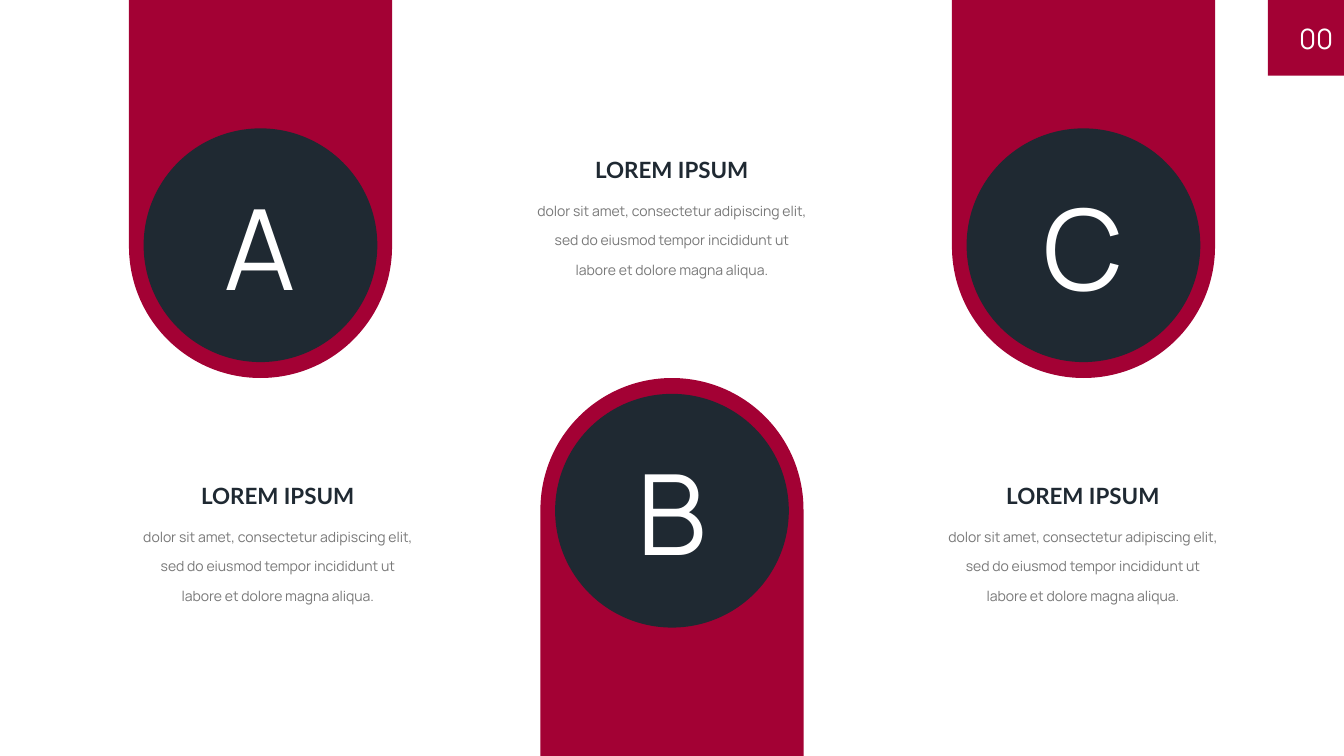
import pptx
import pptx.dml.color
import pptx.enum.shapes
import pptx.enum.text
import pptx.util
from dataclasses import dataclass

Cm = pptx.util.Cm
SHAPES = pptx.enum.shapes.MSO_SHAPE
ALIGN = pptx.enum.text.PP_ALIGN
ANCHOR = pptx.enum.text.MSO_ANCHOR


@dataclass(frozen=True)
class Theme:
    crimson: str = "A30134"
    navy: str = "1F2932"
    gray: str = "787878"
    white: str = "FFFFFF"
    heading_font: str = "Lato"
    body_font: str = "Manrope"
    letter_size: int = 80
    number_size: int = 20
    heading_size: int = 16
    body_size: int = 10


class SlideBuilder:
    def __init__(self, slide, theme):
        self.slide = slide
        self.theme = theme

    def shape(self, kind, left, top, width, height, color):
        shape = self.slide.shapes.add_shape(
            kind, Cm(left), Cm(top), Cm(width), Cm(height))
        shape.shadow.inherit = False
        shape.fill.solid()
        shape.fill.fore_color.rgb = pptx.dml.color.RGBColor.from_string(color)
        shape.line.fill.background()
        return shape

    def set_text(self, shape, text, font, size, color, align=ALIGN.CENTER, bold=False):
        shape.text_frame.word_wrap = True
        paragraph = shape.text_frame.paragraphs[0]
        paragraph.text = text
        paragraph.alignment = align
        paragraph.font.name = font
        paragraph.font.size = pptx.util.Pt(size)
        paragraph.font.bold = bold
        paragraph.font.color.rgb = pptx.dml.color.RGBColor.from_string(color)
        return paragraph

    def text_box(self, left, top, width, height):
        return self.slide.shapes.add_textbox(
            Cm(left), Cm(top), Cm(width), Cm(height))

    def page_number(self, number):
        theme = self.theme
        self.shape(SHAPES.RECTANGLE, 31.95, 0, 1.92, 1.91, theme.crimson)
        box = self.text_box(31.9, 0, 1.7, 1.91)
        frame = box.text_frame
        frame.margin_left = frame.margin_right = 0
        frame.margin_top = frame.margin_bottom = 0
        frame.vertical_anchor = ANCHOR.MIDDLE
        self.set_text(box, number, theme.body_font, theme.number_size,
                      theme.white, ALIGN.RIGHT)

    def letter_tab(self, letter, left, hanging):
        """Half-height tab with a lettered disc, from the top or bottom edge."""
        theme = self.theme
        tab = self.shape(SHAPES.ROUND_2_SAME_RECTANGLE, left,
                         0 if hanging else TAB_HEIGHT, TAB_WIDTH, TAB_HEIGHT,
                         theme.crimson)
        tab.adjustments[0] = 0.5
        tab.adjustments[1] = 0
        tab.rotation = 180 if hanging else 0

        disc_top = (TAB_HEIGHT - DISC_RIM - DISC_SIZE if hanging
                    else TAB_HEIGHT + DISC_RIM)
        disc = self.shape(SHAPES.OVAL, left + (TAB_WIDTH - DISC_SIZE) / 2,
                          disc_top, DISC_SIZE, DISC_SIZE, theme.navy)
        disc.text_frame.vertical_anchor = ANCHOR.MIDDLE
        self.set_text(disc, letter, theme.body_font, theme.letter_size, theme.white)

    def caption(self, heading, body, left, top):
        theme = self.theme
        self.set_text(self.text_box(left, top, CAPTION_WIDTH, 0.94), heading,
                      theme.heading_font, theme.heading_size, theme.navy, bold=True)
        paragraph = self.set_text(
            self.text_box(left, top + 0.85, CAPTION_WIDTH, 2.41), body,
            theme.body_font, theme.body_size, theme.gray)
        paragraph.line_spacing = 1.75


SLIDE_WIDTH, SLIDE_HEIGHT = 33.87, 19.05
TAB_WIDTH, TAB_HEIGHT = 6.63, SLIDE_HEIGHT / 2
TAB_LEFT, TAB_PITCH = 3.25, 10.37
DISC_SIZE, DISC_RIM = 5.89, 0.4
CAPTION_WIDTH = 7.34
HEADING = "LOREM IPSUM"
BODY = ("dolor sit amet, consectetur adipiscing elit, sed do eiusmod tempor "
        "incididunt ut labore et dolore magna aliqua.")
# Letter, caption left, caption top, tab hangs from the top edge
COLUMNS = [
    ("A", 3.33, 12.02, True),
    ("B", 13.26, 3.81, False),
    ("C", 23.62, 12.02, True),
]


def main():
    presentation = pptx.Presentation()
    presentation.slide_width = Cm(SLIDE_WIDTH)
    presentation.slide_height = Cm(SLIDE_HEIGHT)
    slide = presentation.slides.add_slide(presentation.slide_layouts[6])
    builder = SlideBuilder(slide, Theme())

    # Page number in the corner
    builder.page_number("00")

    # Alternating tabs, each with its caption in the free half
    for index, (letter, caption_left, caption_top, hanging) in enumerate(COLUMNS):
        builder.letter_tab(letter, TAB_LEFT + index * TAB_PITCH, hanging)
        builder.caption(HEADING, BODY, caption_left, caption_top)

    presentation.save("out.pptx")


if __name__ == "__main__":
    main()
